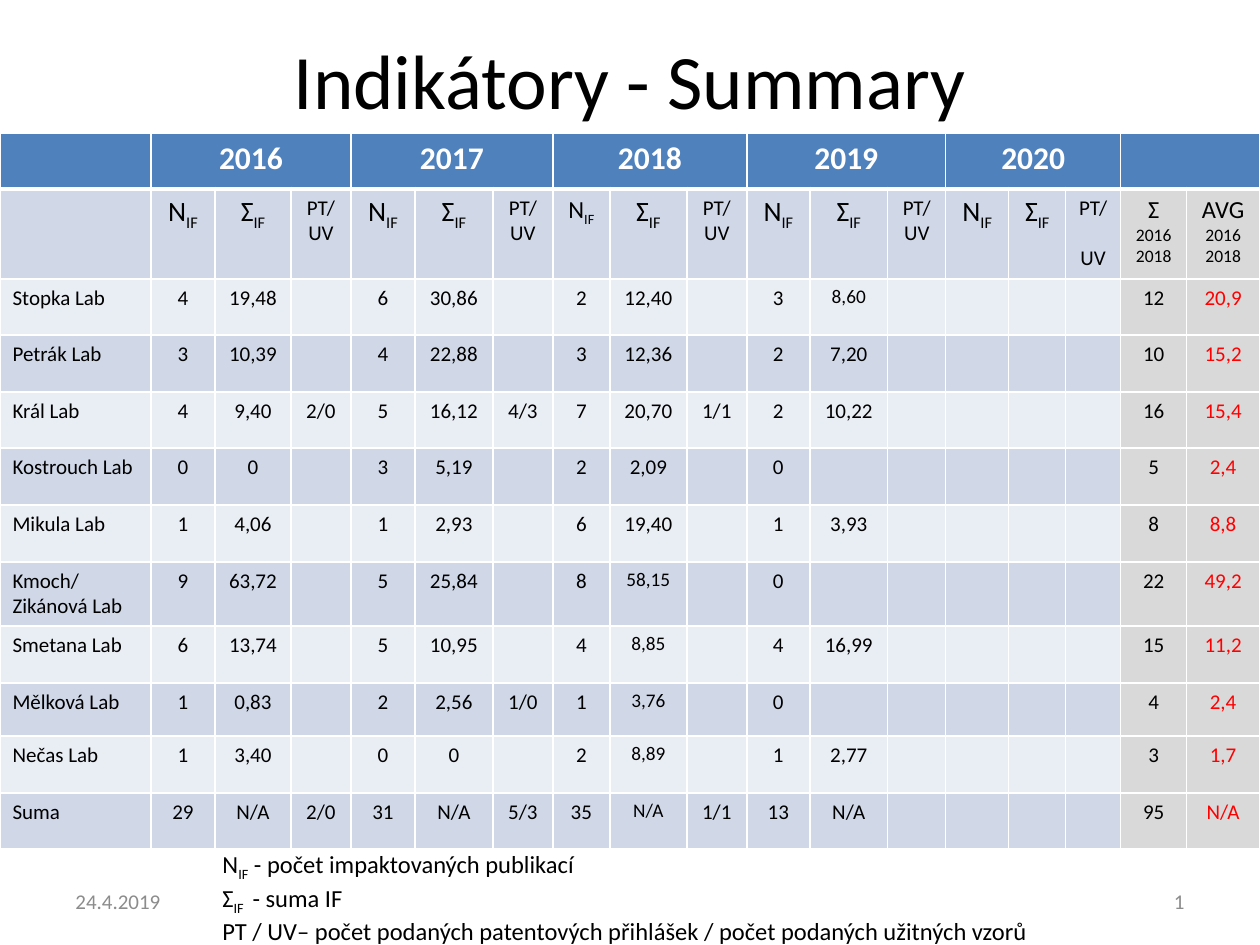
from lxml import etree
from pptx import Presentation
from pptx.dml.color import RGBColor
from pptx.enum.text import MSO_ANCHOR as ANCHOR, MSO_AUTO_SIZE as AUTO_SIZE, PP_ALIGN as ALIGN
from pptx.oxml.ns import qn
from pptx.util import Emu, Pt

PX = 914400 // 126
FONT = "Calibri"
BLACK, WHITE, RED, GREY = "000000", "FFFFFF", "FF0000", "8C8C8C"
HEADER, BAND_DARK, BAND_LIGHT, TOTAL = "4F81BD", "D0D8E8", "E9EDF4", "D9D9D9"

YEARS = ["2016", "2017", "2018", "2019", "2020"]
COLUMNS = [151, 64, 76, 60, 64, 78, 60, 57, 77, 60, 63, 78, 58, 63, 57, 55, 66, 73]
ROWS = [56, 90, 56, 57, 56, 57, 57, 64, 57, 53, 57, 56]
LABS = [
    "Stopka Lab|4|19,48||6|30,86||2|12,40||3|8,60|||||12|20,9",
    "Petrák Lab|3|10,39||4|22,88||3|12,36||2|7,20|||||10|15,2",
    "Král Lab|4|9,40|2/0|5|16,12|4/3|7|20,70|1/1|2|10,22|||||16|15,4",
    "Kostrouch Lab|0|0||3|5,19||2|2,09||0||||||5|2,4",
    "Mikula Lab|1|4,06||1|2,93||6|19,40||1|3,93|||||8|8,8",
    "Kmoch/\nZikánová Lab|9|63,72||5|25,84||8|58,15||0||||||22|49,2",
    "Smetana Lab|6|13,74||5|10,95||4|8,85||4|16,99|||||15|11,2",
    "Mělková Lab|1|0,83||2|2,56|1/0|1|3,76||0||||||4|2,4",
    "Nečas Lab|1|3,40||0|0||2|8,89||1|2,77|||||3|1,7",
    "Suma|29|N/A|2/0|31|N/A|5/3|35|N/A|1/1|13|N/A|||||95|N/A",
]
SMALL_VALUES = {(2, 11)} | {(row, 8) for row in range(7, 12)}


def px(n):
    """Convert pixels to EMU."""
    return Emu(n * PX)


def rgb(color):
    """Turn a hex string into a colour."""
    return RGBColor.from_string(color)


def add_run(p, text, size, color=BLACK, bold=False, sub=False):
    """Add one formatted run to a paragraph."""
    r = p.add_run()
    r.text = text
    r.font.name, r.font.size, r.font.bold = FONT, Pt(size), bold
    r.font.color.rgb = rgb(color)
    if sub:
        r.font._element.set("baseline", "-25000")


def add_paragraphs(tf, paragraphs, align=ALIGN.LEFT, color=BLACK, bold=False):
    """Write paragraphs, each a list of (text, size) or (text, size, sub) runs."""
    for i, runs in enumerate(paragraphs):
        p = tf.add_paragraph() if i else tf.paragraphs[0]
        p.alignment = align
        for text, size, *sub in runs:
            add_run(p, text, size, color, bold, bool(sub))


def with_index(symbol, size):
    """Return the runs of a symbol with the subscript IF."""
    return [(symbol, size), ("IF", size, True)]


def style_cell(cell, fill, bottom=1):
    """Give a cell white borders and a solid fill."""
    tcPr = cell._tc.get_or_add_tcPr()
    for side, width in (("L", 1), ("R", 1), ("T", 1), ("B", bottom)):
        ln = etree.SubElement(tcPr, qn(f"a:ln{side}"), w=str(Pt(width)))
        solid = etree.SubElement(ln, qn("a:solidFill"))
        etree.SubElement(solid, qn("a:srgbClr"), val=WHITE)
    cell.fill.solid()
    cell.fill.fore_color.rgb = rgb(fill)


def fill_year_header(table):
    """Merge the top row by year and write the years."""
    for i, year in enumerate(YEARS):
        first = 1 + 3 * i
        table.cell(0, first).merge(table.cell(0, first + 2))
        add_paragraphs(table.cell(0, first).text_frame, [[(year, 18)]], ALIGN.CENTER, WHITE, True)
    table.cell(0, 16).merge(table.cell(0, 17))


def fill_indicator_header(table):
    """Write the indicator names under each year and the totals."""
    for i, year in enumerate(YEARS):
        patents = [[("PT/", 12)], [("UV", 12)]] if year == "2020" else [[("PT/ UV", 12)]]
        names = [[with_index("N", 14 if year == "2018" else 16)], [with_index("Ʃ", 16)], patents]
        for j, paragraphs in enumerate(names):
            add_paragraphs(table.cell(1, 1 + 3 * i + j).text_frame, paragraphs, ALIGN.CENTER)
    table.cell(1, 15).text_frame.paragraphs[1].space_before = Pt(14.4)
    for col, name in ((16, "Ʃ"), (17, "AVG")):
        paragraphs = [[(name, 14)], [("2016", 10)], [("2018", 10)]]
        add_paragraphs(table.cell(1, col).text_frame, paragraphs, ALIGN.CENTER)


def fill_labs(table):
    """Write one row of values for each lab."""
    for row, lab in enumerate(LABS, 2):
        for col, value in enumerate(lab.split("|")):
            if value:
                size = 11 if (row, col) in SMALL_VALUES else 12
                add_paragraphs(table.cell(row, col).text_frame,
                               [[(line, size)] for line in value.split("\n")],
                               ALIGN.CENTER if col else ALIGN.LEFT,
                               RED if col == 17 else BLACK)


def add_summary_table(s, x, y, w, h):
    """Build the table of indicators."""
    table = s.shapes.add_table(len(ROWS), len(COLUMNS), px(x), px(y), px(w), px(h)).table
    for column, width in zip(table.columns, COLUMNS):
        column.width = px(width)
    for i, (row, height) in enumerate(zip(table.rows, ROWS)):
        row.height = px(height)
        for j, cell in enumerate(row.cells):
            if i == 0:
                style_cell(cell, HEADER, 3)
            else:
                style_cell(cell, TOTAL if j > 15 else BAND_DARK if i % 2 else BAND_LIGHT)
    fill_year_header(table)
    fill_indicator_header(table)
    fill_labs(table)


def add_title(s, x, y, w, h):
    """Place and format the title."""
    sp = s.shapes.title
    sp.left, sp.top, sp.width, sp.height = px(x), px(y), px(w), px(h)
    sp.text_frame.vertical_anchor = ANCHOR.MIDDLE
    add_paragraphs(sp.text_frame, [[("Indikátory - Summary", 44)]], ALIGN.CENTER)


def add_text(s, x, y, w, h, paragraphs, align=ALIGN.LEFT, color=BLACK, anchor=ANCHOR.TOP):
    """Add a wrapping text box and return its frame."""
    tf = s.shapes.add_textbox(px(x), px(y), px(w), px(h)).text_frame
    tf.word_wrap = True
    tf.vertical_anchor = anchor
    add_paragraphs(tf, paragraphs, align, color)
    return tf


def add_footer(s, x, y, w, h):
    """Put the date at the left and the slide number at the right."""
    width = 294
    for left, text, align in ((x, "24.4.2019", ALIGN.LEFT), (x + w - width, "1", ALIGN.RIGHT)):
        add_text(s, left, y, width, h, [[(text, 12)]], align, GREY, ANCHOR.MIDDLE)


def add_legend(s, x, y, w, h):
    """Explain the indicators below the table."""
    tf = add_text(s, x, y, w, h, [
        with_index("N", 14) + [(" - počet impaktovaných publikací", 14)],
        [("Ʃ", 14), ("IF ", 14, True), (" - suma IF", 14)],
        [("PT / UV– počet podaných patentových přihlášek / počet podaných užitných vzorů", 14)],
    ])
    tf.auto_size = AUTO_SIZE.SHAPE_TO_FIT_TEXT


def main():
    """Build the slide and save it."""
    prs = Presentation()
    prs.slide_width, prs.slide_height = px(1260), px(945)
    s = prs.slides.add_slide(prs.slide_layouts[5])
    add_title(s, 63, 0, 1134, 158)
    add_summary_table(s, 0, 133, sum(COLUMNS), sum(ROWS))
    add_footer(s, 63, 876, 1134, 50)
    add_legend(s, 210, 843, 1018, 102)
    prs.save("out.pptx")


if __name__ == "__main__":
    main()
